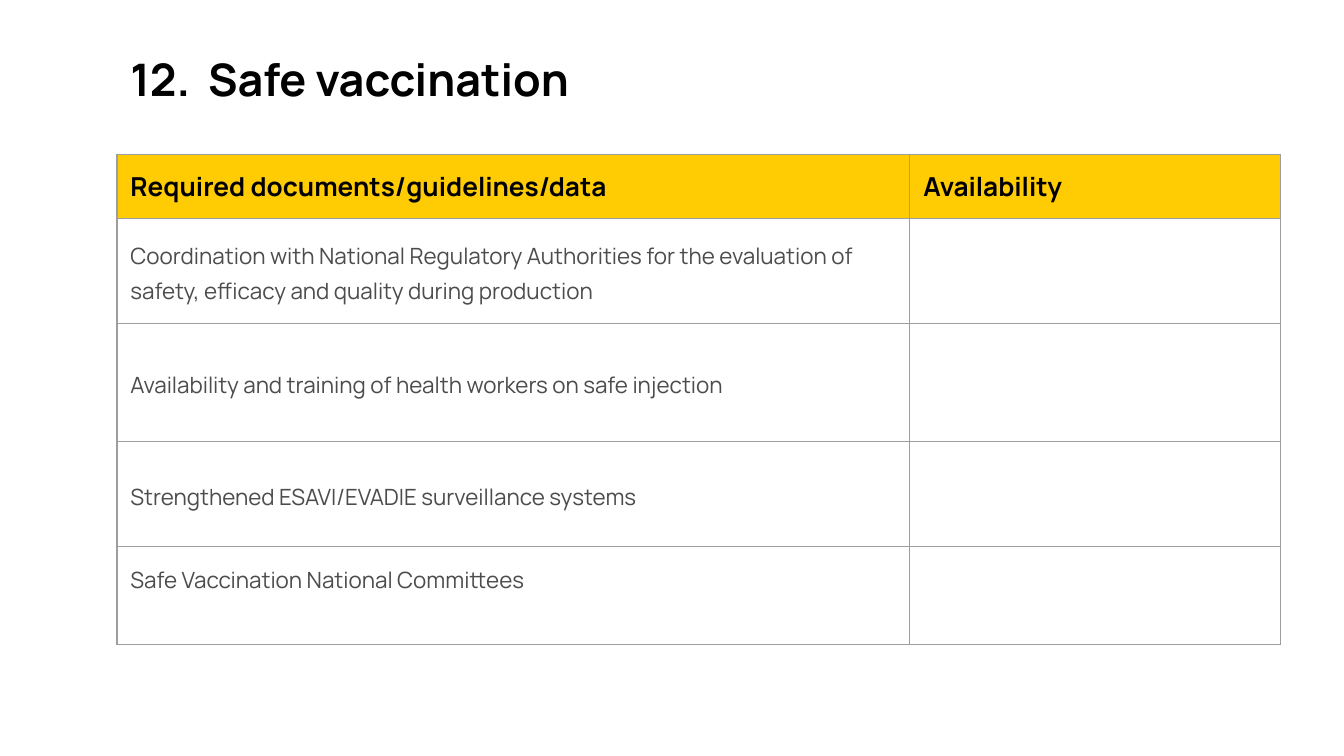
from dataclasses import dataclass

from lxml.etree import SubElement
from pptx import Presentation
from pptx.dml.color import RGBColor
from pptx.enum.text import MSO_ANCHOR as Anchor, MSO_AUTO_SIZE as AutoSize, PP_ALIGN as Align
from pptx.oxml.ns import qn
from pptx.util import Inches, Pt


@dataclass(frozen=True)
class Theme:
    font: str = "Manrope"
    ink: str = "000000"
    body: str = "4C4C4C"
    header: str = "FFCB03"
    border: str = "9E9E9E"
    title_size: int = 24
    header_size: int = 14
    body_size: int = 12
    border_width: float = 0.75
    inset: float = 0.1


@dataclass(frozen=True)
class Row:
    texts: tuple[str, str]
    height: float  # inches
    anchor: Anchor = Anchor.MIDDLE
    is_header: bool = False


THEME = Theme()
WIDTH = 10
HEIGHT = WIDTH * 9 / 16
LEFT = 8.7  # percent of the slide width
COLUMNS = (59, 27.6)  # percent of the slide width
ROWS = (
    Row(("Required documents/guidelines/data", "Availability"), 0.48, is_header=True),
    Row(("Coordination with National Regulatory Authorities for the evaluation of "
         "safety, efficacy and quality during production", ""), 0.78),
    Row(("Availability and training of health workers on safe injection", ""), 0.88),
    Row(("Strengthened ESAVI/EVADIE surveillance systems", ""), 0.78),
    Row(("Safe Vaccination National Committees", ""), 0.73, anchor=Anchor.TOP),
)


def across(percent: float) -> int:
    return Inches(percent / 100 * WIDTH)


def down(percent: float) -> int:
    return Inches(percent / 100 * HEIGHT)


def write(frame, text: str, *, size: float, color: str, bold: bool = False,
          spacing: float = 1.0) -> None:
    frame.word_wrap = True
    paragraph = frame.paragraphs[0]
    paragraph.alignment = Align.LEFT
    paragraph.line_spacing = spacing
    paragraph.space_before = Pt(0)
    paragraph.font.size = Pt(size)
    if text:
        run = paragraph.add_run()
        run.text = text
        run.font.name = THEME.font
        run.font.size = Pt(size)
        run.font.bold = bold
        run.font.color.rgb = RGBColor.from_string(color)


def set_insets(holder) -> None:
    for side in ("left", "top", "right", "bottom"):
        setattr(holder, f"margin_{side}", Inches(THEME.inset))


def add_borders(cell) -> None:
    properties = cell._tc.get_or_add_tcPr()
    for index, edge in enumerate(("lnL", "lnR", "lnT", "lnB")):
        line = properties.makeelement(qn(f"a:{edge}"), {"w": str(Pt(THEME.border_width))})
        fill = SubElement(line, qn("a:solidFill"))
        SubElement(fill, qn("a:srgbClr"), val=THEME.border)
        properties.insert(index, line)  # borders come before the fill


def fill_row(cells, row: Row) -> None:
    for cell, text in zip(cells, row.texts):
        set_insets(cell)
        cell.vertical_anchor = row.anchor
        if row.is_header:
            cell.fill.solid()
            cell.fill.fore_color.rgb = RGBColor.from_string(THEME.header)
            write(cell.text_frame, text, size=THEME.header_size, color=THEME.ink, bold=True)
        else:
            cell.fill.background()
            write(cell.text_frame, text, size=THEME.body_size, color=THEME.body, spacing=1.15)
        add_borders(cell)


# Heading
def add_title(slide, text: str) -> None:
    title = slide.shapes.title
    title.left, title.top = across(LEFT), down(5.1)
    title.width, title.height = across(100 - LEFT), down(10.5)
    frame = title.text_frame
    frame.auto_size = AutoSize.NONE
    frame.vertical_anchor = Anchor.MIDDLE
    set_insets(frame)
    write(frame, text, size=THEME.title_size, color=THEME.ink, bold=True)


# Table of required documents
def add_checklist(slide, rows: tuple[Row, ...]) -> None:
    checklist = slide.shapes.add_table(
        len(rows), len(COLUMNS), across(LEFT), down(20.4),
        across(sum(COLUMNS)), Inches(sum(row.height for row in rows))).table
    checklist.horz_banding = False
    for column, percent in zip(checklist.columns, COLUMNS):
        column.width = across(percent)
    for table_row, row in zip(checklist.rows, rows):
        table_row.height = Inches(row.height)
        fill_row(table_row.cells, row)


def main() -> None:
    deck = Presentation()
    deck.slide_width, deck.slide_height = Inches(WIDTH), Inches(HEIGHT)
    slide = deck.slides.add_slide(deck.slide_layouts[5])  # title only
    add_title(slide, "12.  Safe vaccination")
    add_checklist(slide, ROWS)
    deck.save("out.pptx")


if __name__ == "__main__":
    main()
